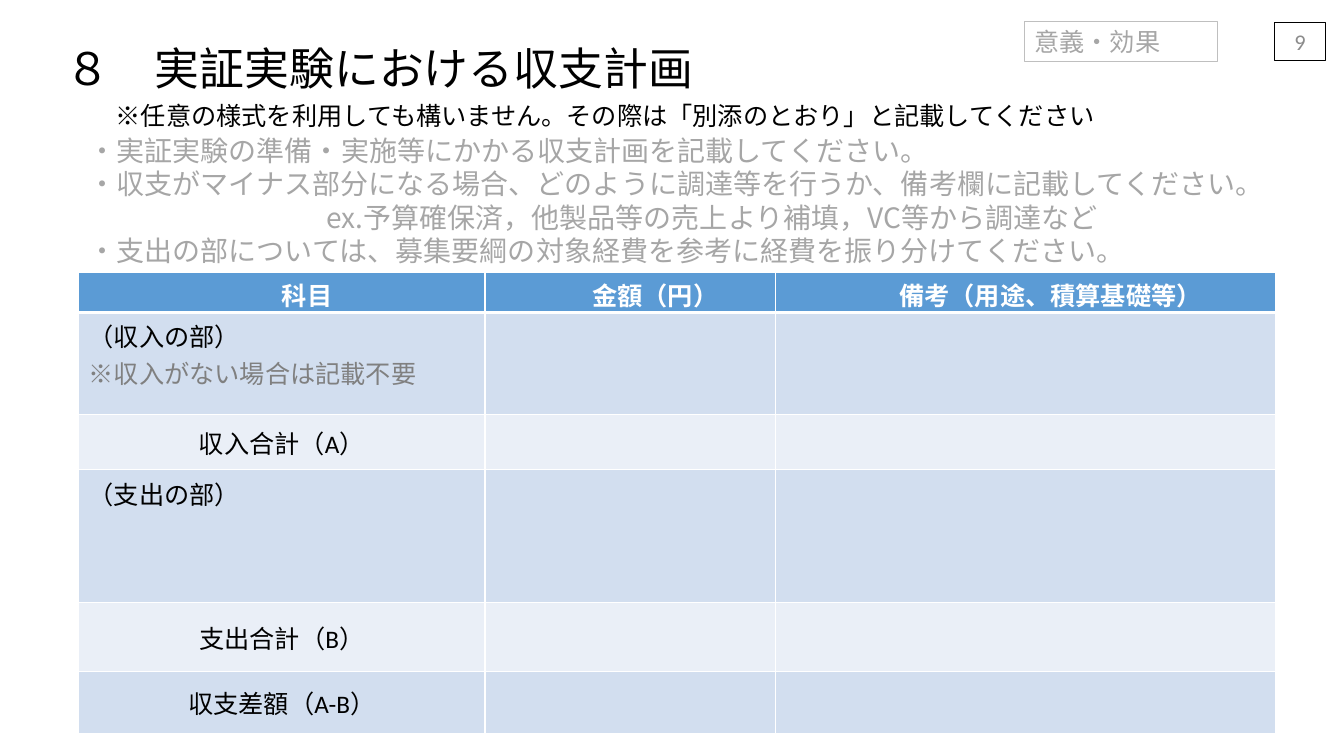
from dataclasses import dataclass

from lxml.etree import SubElement
from pptx import Presentation
from pptx.dml.color import RGBColor
from pptx.enum.shapes import MSO_SHAPE
from pptx.enum.text import MSO_ANCHOR, PP_ALIGN
from pptx.oxml.ns import qn
from pptx.util import Inches, Pt

BLACK = RGBColor(0x00, 0x00, 0x00)
WHITE = RGBColor(0xFF, 0xFF, 0xFF)
GUIDE_GRAY = RGBColor(0xA6, 0xA6, 0xA6)
NOTE_GRAY = RGBColor(0x80, 0x80, 0x80)
NUMBER_GRAY = RGBColor(0x8C, 0x8C, 0x8C)
FRAME_GRAY = RGBColor(0xBF, 0xBF, 0xBF)
HEADER_BLUE = RGBColor(0x5B, 0x9B, 0xD5)
BAND_DARK = RGBColor(0xD2, 0xDE, 0xEF)
BAND_LIGHT = RGBColor(0xEA, 0xEF, 0xF7)
JAPANESE_FONT = "Noto Sans CJK JP"
LATIN_FONT = "Calibri"


@dataclass
class Area:
    left: float
    top: float
    width: float
    height: float

    def lengths(self) -> list:
        return [Inches(n) for n in (self.left, self.top, self.width, self.height)]


@dataclass
class BudgetRow:
    lines: list[str]
    height: float
    total: bool = False


HEADINGS = ["科目", "金額（円）", "備考（用途、積算基礎等）"]
COLUMN_WIDTHS = [4.03, 2.88, 4.96]
HEADER_HEIGHT = 0.4
BUDGET_ROWS = [
    BudgetRow(["（収入の部）", "※収入がない場合は記載不要"], 1.01),
    BudgetRow(["収入合計（A）"], 0.55, total=True),
    BudgetRow(["（支出の部）"], 1.32),
    BudgetRow(["支出合計（B）"], 0.68, total=True),
    BudgetRow(["収支差額（A-B）"], 0.62, total=True),
]
GUIDE_LINES = [
    ("・実証実験の準備・実施等にかかる収支計画を記載してください。", 0),
    ("・収支がマイナス部分になる場合、どのように調達等を行うか、備考欄に記載してください。", 0),
    ("ex.予算確保済，他製品等の売上より補填，VC等から調達など", 2.36),
    ("・支出の部については、募集要綱の対象経費を参考に経費を振り分けてください。", 0),
]


def write(frame, text: str, *, size: float = 18, color: RGBColor = BLACK,
          font: str = LATIN_FONT, bold: bool = False, align=PP_ALIGN.LEFT,
          indent: float = 0, leading: float | None = None, before: float = 0):
    """Fill the empty first paragraph, or add one after the text already there."""
    para = frame.paragraphs[0]
    if para.runs:
        para = frame.add_paragraph()
    para.alignment = align
    para.space_before = Pt(before)
    if leading:
        para.line_spacing = Pt(leading)
    if indent:
        properties = para._p.get_or_add_pPr()
        properties.set("marL", str(Inches(indent)))
        properties.set("indent", "0")
    span = para.add_run()
    span.text = text
    span.font.size = Pt(size)
    span.font.bold = bold
    span.font.color.rgb = color
    span.font.name = font
    SubElement(span._r.get_or_add_rPr(), qn("a:ea"), typeface=JAPANESE_FONT)


def add_text_area(page, area: Area, anchor=MSO_ANCHOR.TOP):
    frame = page.shapes.add_textbox(*area.lengths()).text_frame
    frame.word_wrap = True
    frame.vertical_anchor = anchor
    return frame


def add_frame(page, area: Area, line: RGBColor, fill: RGBColor | None = None,
              anchor=MSO_ANCHOR.TOP):
    box = page.shapes.add_shape(MSO_SHAPE.RECTANGLE, *area.lengths())
    box.shadow.inherit = False
    if fill is None:
        box.fill.background()
    else:
        box.fill.solid()
        box.fill.fore_color.rgb = fill
    box.line.color.rgb = line
    box.line.width = Pt(0.75)
    box.text_frame.word_wrap = True
    box.text_frame.vertical_anchor = anchor
    return box.text_frame


def style_cell(cell, fill: RGBColor, top: float = 1, bottom: float = 1) -> None:
    """Set white borders, with widths in points, and then the fill."""
    properties = cell._tc.get_or_add_tcPr()
    for side, width in (("L", 1), ("R", 1), ("T", top), ("B", bottom)):
        border = SubElement(properties, qn(f"a:ln{side}"), w=str(Pt(width)))
        paint = SubElement(border, qn("a:solidFill"))
        SubElement(paint, qn("a:srgbClr"), val=str(WHITE))
    cell.fill.solid()
    cell.fill.fore_color.rgb = fill


def add_budget_table(page, area: Area) -> None:
    table = page.shapes.add_table(
        len(BUDGET_ROWS) + 1, len(HEADINGS), *area.lengths()).table
    for column, width in zip(table.columns, COLUMN_WIDTHS):
        column.width = Inches(width)
    heights = [HEADER_HEIGHT] + [row.height for row in BUDGET_ROWS]
    for row, height in zip(table.rows, heights):
        row.height = Inches(height)

    for column, heading in enumerate(HEADINGS):
        cell = table.cell(0, column)
        style_cell(cell, HEADER_BLUE, bottom=3)
        cell.margin_top, cell.margin_bottom = Inches(0.04), 0
        cell.vertical_anchor = MSO_ANCHOR.MIDDLE
        write(cell.text_frame, heading, color=WHITE, bold=True,
              align=PP_ALIGN.CENTER, indent=0.5)

    for number, row in enumerate(BUDGET_ROWS, start=1):
        for column in range(len(HEADINGS)):
            style_cell(table.cell(number, column),
                       BAND_DARK if number % 2 else BAND_LIGHT,
                       top=3 if number == 1 else 1)
        item = table.cell(number, 0)
        item.vertical_anchor = MSO_ANCHOR.MIDDLE if row.total else MSO_ANCHOR.TOP
        for line in row.lines:
            write(item.text_frame, line,
                  color=NOTE_GRAY if line.startswith("※") else BLACK,
                  align=PP_ALIGN.CENTER if row.total else PP_ALIGN.LEFT)


def main() -> None:
    deck = Presentation()
    deck.slide_width, deck.slide_height = Inches(13.33), Inches(7.5)
    page = deck.slides.add_slide(deck.slide_layouts[6])

    number = add_frame(page, Area(12.64, 0.22, 0.51, 0.38), BLACK, WHITE,
                       MSO_ANCHOR.MIDDLE)
    write(number, "9", size=16, color=NUMBER_GRAY, align=PP_ALIGN.CENTER)

    title = add_text_area(page, Area(0.55, 0.5, 10.66, 0.71), MSO_ANCHOR.MIDDLE)
    write(title, "８　実証実験における収支計画", size=32, leading=38, before=4)
    write(title, "※任意の様式を利用しても構いません。その際は「別添のとおり」と記載してください",
          indent=0.5, leading=22, before=4)

    guide = add_text_area(page, Area(0.78, 1.27, 11.88, 1.45))
    for text, indent in GUIDE_LINES:
        write(guide, text, size=20, color=GUIDE_GRAY, font=JAPANESE_FONT,
              indent=indent, leading=24)

    add_budget_table(page, Area(0.78, 2.7, 11.87, 4.58))

    label = add_frame(page, Area(10.16, 0.21, 1.92, 0.4), FRAME_GRAY)
    write(label, "意義・効果", color=GUIDE_GRAY, font=JAPANESE_FONT, leading=22)

    deck.save("out.pptx")


if __name__ == "__main__":
    main()
